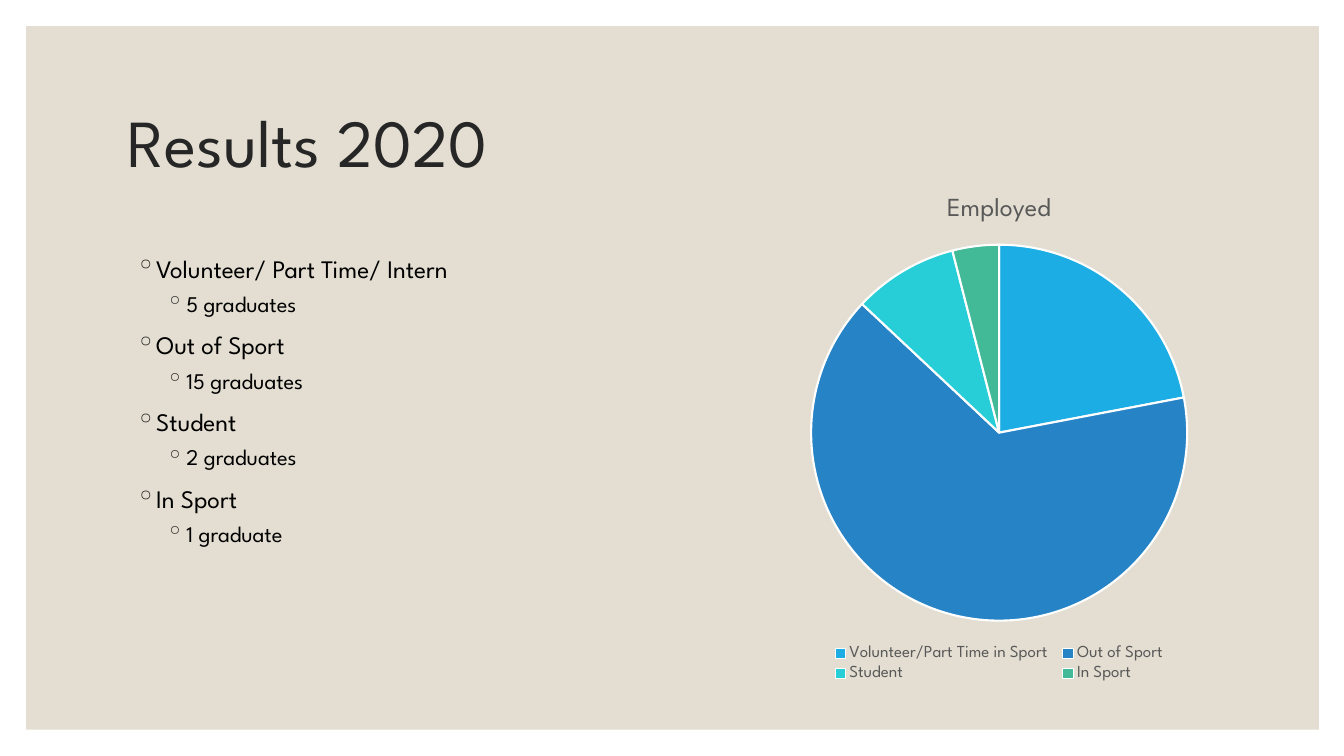
from dataclasses import dataclass

from lxml import etree
from pptx import Presentation
from pptx.chart.data import CategoryChartData
from pptx.dml.color import RGBColor
from pptx.enum.chart import XL_CHART_TYPE, XL_LEGEND_POSITION
from pptx.enum.shapes import MSO_SHAPE
from pptx.enum.text import MSO_ANCHOR
from pptx.oxml.ns import qn
from pptx.util import Inches, Pt

RECTANGLE = MSO_SHAPE.RECTANGLE
PIE = XL_CHART_TYPE.PIE
BOTTOM = XL_LEGEND_POSITION.BOTTOM
TOP, MIDDLE = MSO_ANCHOR.TOP, MSO_ANCHOR.MIDDLE


@dataclass(frozen=True)
class Theme:
    font: str = "League Spartan"
    white: str = "FFFFFF"
    panel: str = "E3DED1"
    heading: str = "262626"
    body: str = "000000"
    chart_text: str = "595959"
    slices: tuple = ("1CADE4", "2683C6", "27CED7", "42BA97")
    title_size: float = 48
    group_size: float = 18
    count_size: float = 16
    chart_title_size: float = 18.6
    chart_size: float = 10
    legend_size: float = 12


THEME = Theme()

RESULTS = [
    ("Volunteer/ Part Time/ Intern", "5 graduates"),
    ("Out of Sport", "15 graduates"),
    ("Student", "2 graduates"),
    ("In Sport", "1 graduate"),
]
SHARES = {
    "Volunteer/Part Time in Sport ": 22,
    "Out of Sport": 65,
    "Student": 9,
    "In Sport": 4,
}


def rgb(color):
    return RGBColor.from_string(color)


def style_font(font, size, color):
    font.name = THEME.font
    font.size = Pt(size)
    font.bold = False
    font.color.rgb = rgb(color)


def add_text(p, text, *, size, color, before=0, line=1.0):
    p.space_before = Pt(before)
    p.line_spacing = line
    r = p.add_run()
    r.text = text
    style_font(r.font, size, color)


def add_frame(slide, box, anchor):
    tf = slide.shapes.add_textbox(*map(Inches, box)).text_frame
    tf.word_wrap = True
    tf.vertical_anchor = anchor
    return tf


def add_bullet(p, left):
    pPr = p._p.get_or_add_pPr()
    pPr.set("marL", str(Inches(left)))
    pPr.set("indent", str(Inches(-0.2)))
    color = etree.SubElement(pPr, qn("a:buClr"))
    etree.SubElement(color, qn("a:srgbClr"), val=THEME.heading)
    etree.SubElement(pPr, qn("a:buChar"), char="◦")


def add_panel(slide, box):
    sp = slide.shapes.add_shape(RECTANGLE, *map(Inches, box))
    sp.shadow.inherit = False
    sp.fill.solid()
    sp.fill.fore_color.rgb = rgb(THEME.panel)
    sp.line.fill.background()


def add_title(slide, box, text):
    tf = add_frame(slide, box, MIDDLE)
    add_text(tf.paragraphs[0], text, size=THEME.title_size,
             color=THEME.heading, line=0.9)


def add_results(slide, box, results):
    tf = add_frame(slide, box, TOP)
    levels = [(THEME.group_size, 9, 0.2), (THEME.count_size, 5, 0.5)]
    p = tf.paragraphs[0]
    for i, result in enumerate(results):
        for level, text in enumerate(result):
            if i or level:
                p = tf.add_paragraph()
            size, before, left = levels[level]
            p.level = level
            add_text(p, text, size=size, color=THEME.body, before=before)
            add_bullet(p, left)


def add_pie(slide, box, name, shares):
    data = CategoryChartData()
    data.categories = list(shares)
    data.add_series(name, list(shares.values()))
    chart = slide.shapes.add_chart(PIE, *map(Inches, box), data).chart
    style_font(chart.font, THEME.chart_size, THEME.body)

    chart.has_title = True
    p = chart.chart_title.text_frame.paragraphs[0]
    add_text(p, name, size=THEME.chart_title_size, color=THEME.chart_text)
    chart.chart_title.include_in_layout = False

    chart.has_legend = True
    chart.legend.position = BOTTOM
    chart.legend.include_in_layout = False
    style_font(chart.legend.font, THEME.legend_size, THEME.chart_text)

    plot = chart.plots[0]
    plot.vary_by_categories = True
    for i, color in enumerate(THEME.slices):
        fmt = plot.series[0].points[i].format
        fmt.fill.solid()
        fmt.fill.fore_color.rgb = rgb(color)
        fmt.line.color.rgb = rgb(THEME.white)
        fmt.line.width = Pt(1.5)


def build_results_slide(prs):
    slide = prs.slides.add_slide(prs.slide_layouts[6])
    slide.background.fill.solid()
    slide.background.fill.fore_color.rgb = rgb(THEME.white)
    add_panel(slide, (0.26, 0.26, 12.82, 6.98))
    add_title(slide, (1.17, 0.7, 11, 1.5), "Results 2020")
    add_results(slide, (1.25, 2.46, 7.45, 3.87), RESULTS)
    add_pie(slide, (6.67, 1.73, 6.48, 5.07), "Employed", SHARES)


def main():
    prs = Presentation()
    prs.slide_width = Inches(13.33)
    prs.slide_height = Inches(7.5)
    build_results_slide(prs)
    prs.save("out.pptx")


if __name__ == "__main__":
    main()
